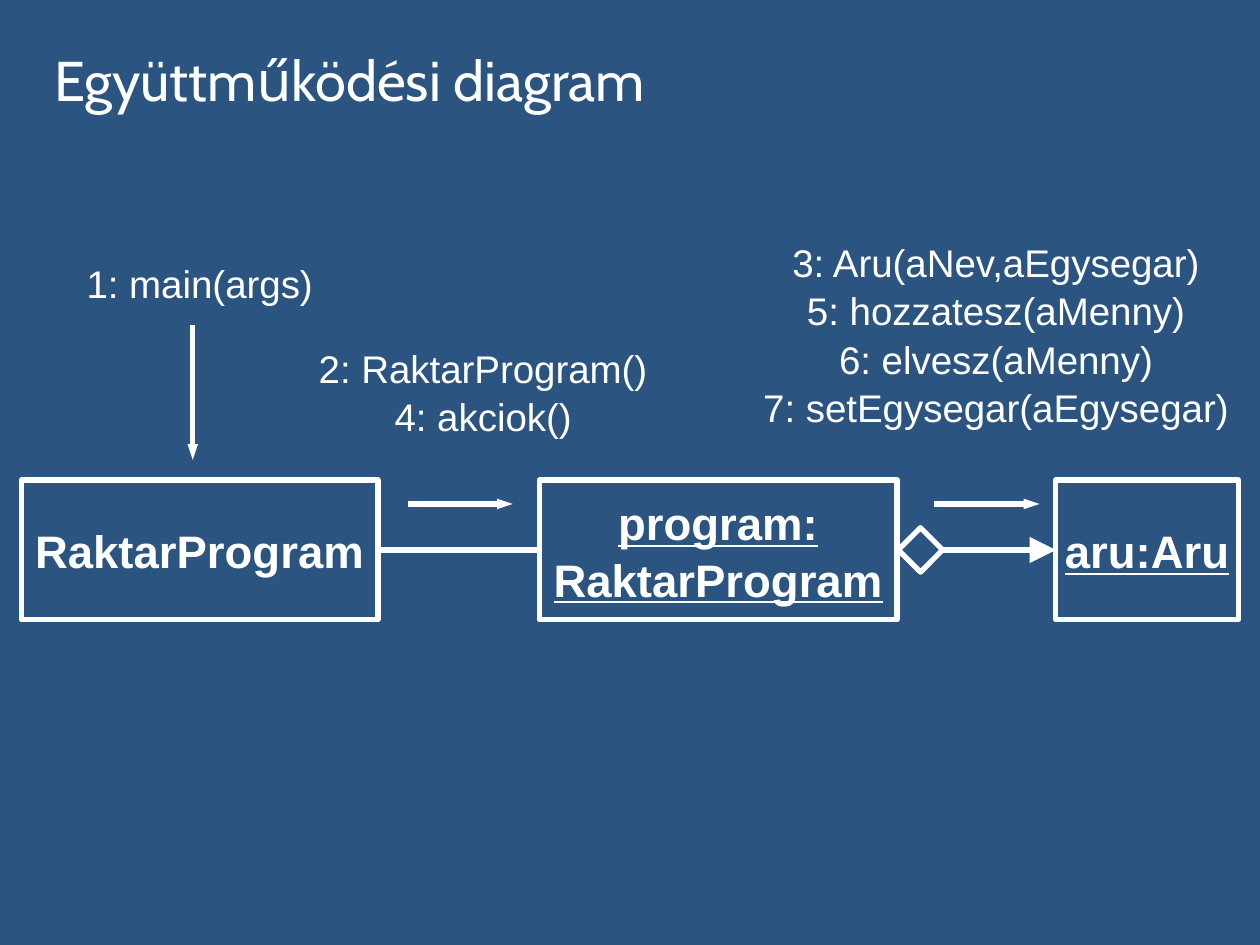
"""Build a collaboration diagram slide."""
import pptx
import pptx.dml.color
import pptx.enum.shapes
import pptx.enum.text
import pptx.oxml.ns
import pptx.util
from lxml import etree

COLORS = {"background": "2B5481", "ink": "FFFFFF"}
WIDTH, HEIGHT = pptx.util.Inches(10), pptx.util.Inches(7.5)
BOX_TOP, BOX_HEIGHT = 50.8, 14.8
MIDDLE = BOX_TOP + BOX_HEIGHT / 2
CALL_ROW = 53.33
BOTTOM, LEFT, RIGHT = 2, 1, 3
CENTER = pptx.enum.text.PP_ALIGN.CENTER


def across(share):
    """Turn a percentage of the slide width into a length."""
    return round(WIDTH * share / 100)


def down(share):
    """Turn a percentage of the slide height into a length."""
    return round(HEIGHT * share / 100)


def place(left, top, width, height):
    """Turn percentages into a position and a size."""
    return across(left), down(top), across(width), down(height)


def color(name):
    """Look up a named colour."""
    return pptx.dml.color.RGBColor.from_string(COLORS[name])


def write(frame, lines, size, font="Arial", align=CENTER, spacing=1.0, bold=False, underline=False):
    """Fill a text frame with equally formatted paragraphs."""
    frame.word_wrap = True
    frame.text = "\n".join(lines)
    for paragraph in frame.paragraphs:
        paragraph.alignment = align
        paragraph.line_spacing = spacing
        paragraph.space_before = pptx.util.Pt(0)
        paragraph.font.name = font
        paragraph.font.size = pptx.util.Pt(size)
        paragraph.font.bold = bold
        paragraph.font.underline = underline
        paragraph.font.color.rgb = color("ink")


def set_stroke(shape):
    """Give a shape or connector the diagram's outline."""
    shape.line.color.rgb = color("ink")
    shape.line.width = pptx.util.Pt(3)


def add_title(slide, text):
    """Place and fill the title placeholder."""
    title = slide.shapes.title
    title.left, title.top, title.width, title.height = place(3.3, 3.33, 72.5, 10)
    title.text_frame.auto_size = pptx.enum.text.MSO_AUTO_SIZE.NONE
    title.text_frame.vertical_anchor = pptx.enum.text.MSO_ANCHOR.MIDDLE
    write(title.text_frame, [text], 32, "Cabin", pptx.enum.text.PP_ALIGN.LEFT)


def add_outline(slide, left, top, width, height):
    """Add an unfilled rectangle."""
    rectangle = pptx.enum.shapes.MSO_SHAPE.RECTANGLE
    shape = slide.shapes.add_shape(rectangle, *place(left, top, width, height))
    shape.shadow.inherit = False
    shape.fill.background()
    set_stroke(shape)
    return shape


def add_object(slide, left, width, lines, underline=True):
    """Add a labelled object box on the common row."""
    shape = add_outline(slide, left, BOX_TOP, width, BOX_HEIGHT)
    frame = shape.text_frame
    frame.margin_left = frame.margin_right = pptx.util.Inches(0.04)
    frame.vertical_anchor = pptx.enum.text.MSO_ANCHOR.MIDDLE
    write(frame, lines, 26, spacing=1.03, bold=True, underline=underline)
    return shape


def add_messages(slide, left, top, width, height, lines):
    """Add a centred list of numbered messages."""
    box = slide.shapes.add_textbox(*place(left, top, width, height))
    write(box.text_frame, lines, 22, spacing=1.05)


def add_line(slide, start, end, head=None):
    """Add a connector, with an optional (width, length) arrowhead."""
    points = [length for x, y in (start, end) for length in (across(x), down(y))]
    line = slide.shapes.add_connector(pptx.enum.shapes.MSO_CONNECTOR.STRAIGHT, *points)
    set_stroke(line)
    if head:
        etree.SubElement(line.line._get_or_add_ln(), pptx.oxml.ns.qn("a:tailEnd"),
                         type="triangle", w=head[0], len=head[1])
    etree.SubElement(line._element.spPr, pptx.oxml.ns.qn("a:effectLst"))
    return line


def main():
    """Build and save the slide."""
    presentation = pptx.Presentation()
    presentation.slide_width, presentation.slide_height = WIDTH, HEIGHT
    slide = presentation.slides.add_slide(presentation.slide_layouts[5])
    slide.background.fill.solid()
    slide.background.fill.fore_color.rgb = color("background")
    add_title(slide, "Együttműködési diagram")

    main_class = add_object(slide, 1.7, 28.3, ["RaktarProgram"], underline=False)
    program = add_object(slide, 42.8, 28.4, ["program:", "RaktarProgram"])
    goods = add_object(slide, 83.8, 14.5, ["aru:Aru"])

    link = add_line(slide, (30, MIDDLE), (42.8, MIDDLE))
    link.begin_connect(main_class, RIGHT)
    link.end_connect(program, LEFT)
    aggregation = add_outline(slide, 71.8, MIDDLE - 1.67, 2.5, 3.33)
    aggregation.rotation = 45
    ownership = add_line(slide, (74.8, MIDDLE), (83.8, MIDDLE), ("lg", "lg"))
    ownership.end_connect(goods, LEFT)

    call_head = ("sm", "med")
    add_line(slide, (15.3, 34.4), (15.3, 48.67), call_head)
    for start, end in ((32.4, 40.7), (74.1, 82.5)):
        add_line(slide, (start, CALL_ROW), (end, CALL_ROW), call_head)

    add_messages(slide, 3.4, 26.67, 24.9, 9.07, ["1: main(args)"])
    add_messages(slide, 21.7, 35.6, 33.3, 13.87, ["2: RaktarProgram()", "4: akciok()"])
    add_messages(slide, 55.7, 24.4, 46.7, 22.27, [
        "3: Aru(aNev,aEgysegar)", "5: hozzatesz(aMenny)",
        "6: elvesz(aMenny)", "7: setEgysegar(aEgysegar)"])
    presentation.save("out.pptx")


if __name__ == "__main__":
    main()
